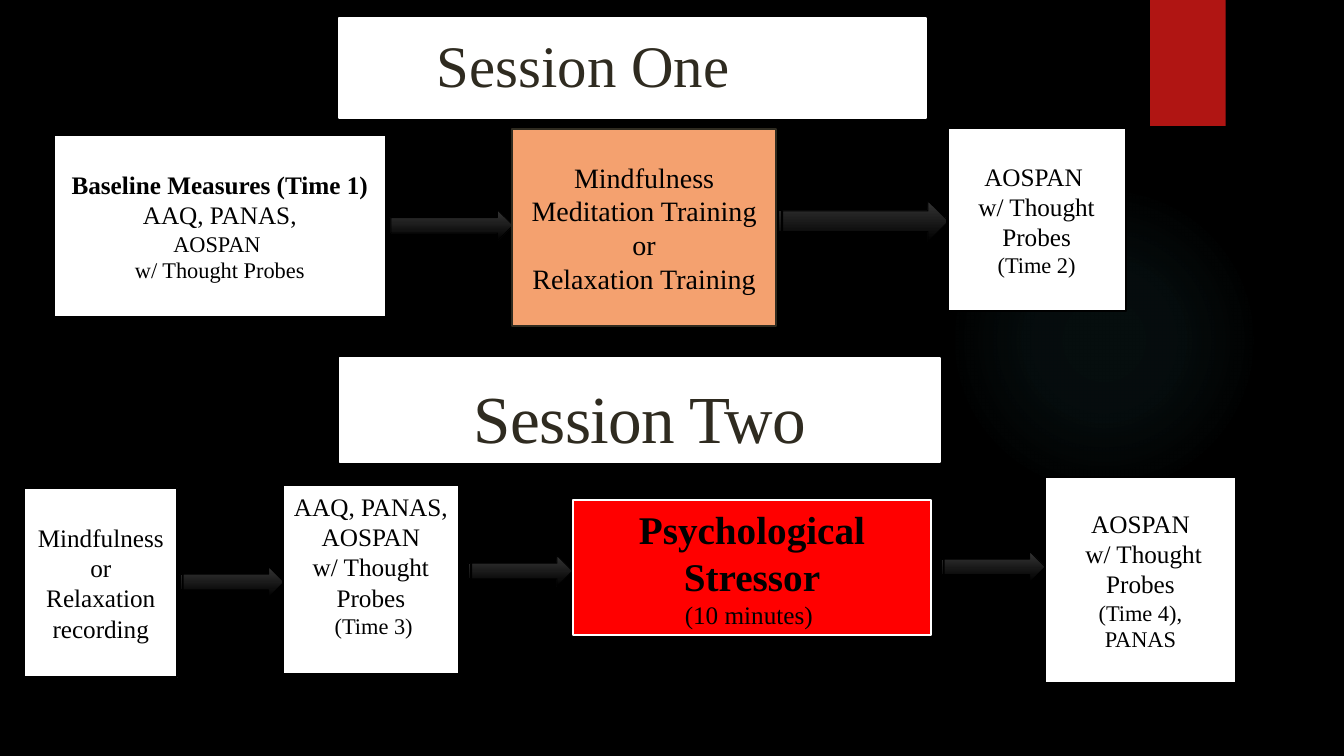
"""Build the two-session study procedure slide."""
import pptx
import pptx.util
import pptx.dml.color
import pptx.enum.shapes
import pptx.enum.text
import pptx.oxml
import pptx.oxml.ns
from dataclasses import dataclass

Pt = pptx.util.Pt
SHAPE = pptx.enum.shapes.MSO_SHAPE
ALIGN = pptx.enum.text.PP_ALIGN
ANCHOR = pptx.enum.text.MSO_ANCHOR


@dataclass
class Theme:
    """Colours, font and type sizes."""
    font: str = "Times New Roman"
    black: str = "000000"
    white: str = "FFFFFF"
    ink: str = "2F2B20"
    orange: str = "F4A16F"
    red: str = "FF0000"
    ribbon: str = "B01513"
    glow: str = "50B9C1"
    arrow: str = "353535"
    title: int = 42
    heading: int = 48
    stressor: int = 28
    training: int = 20
    body: int = 18
    small: int = 16


T = Theme()
TITLE = ("Session One", (241.9, 13, 419.8, 71.3))
HEADING = ("Session Two", (242.6, 255.6, 429.1, 74.2))
RIBBON = (821.5, 0, 54, 90)
GLOW = (677.5, 131.8, 221.8, 221.8)
GLOW_STOPS = ((0, 7), (36, 6), (69, 0))
ARROWS = [
    (275.8, 149.8, 90.7, 22.3),
    (554.4, 143.3, 123.1, 29.5),
    (127.4, 404.6, 75.6, 22.3),
    (333.4, 396.7, 75.6, 22.3),
    (671, 393.8, 75.6, 22.3),
]
BOXES = [
    dict(at=(38.2, 96.5, 237.6, 130.3), lines=[
        ("Baseline Measures (Time 1)", T.body, True), ("AAQ, PANAS,", T.body),
        ("AOSPAN ", T.small), ("w/ Thought Probes", T.small)]),
    dict(at=(676.8, 91.4, 127.4, 131), lines=[
        ("AOSPAN ", T.body), ("w/ Thought Probes", T.body), ("(Time 2)", T.small)]),
    dict(at=(365.8, 92.2, 188.6, 140.4), fill=T.orange, line=T.ink, lines=[
        ("Mindfulness Meditation Training or", T.training),
        ("Relaxation Training", T.training)]),
    dict(at=(17.3, 348.5, 109.4, 135.4), lines=[
        ("Mindfulness or Relaxation recording", T.body)]),
    dict(at=(202.3, 346.3, 125.3, 135.4), bottom=24.3, lines=[
        ("AAQ, PANAS,", T.body), ("AOSPAN", T.body),
        ("w/ Thought Probes", T.body), (" (Time 3)", T.small)]),
    dict(at=(409, 357.1, 256.3, 96.5), fill=T.red, line=T.white, shadow=(43, 4, 3, 45), lines=[
        ("Psychological Stressor", T.stressor, True), ("(10 minutes) ", T.body)]),
    dict(at=(746.6, 340.6, 136.1, 147.6), lines=[
        ("AOSPAN", T.body), (" w/ Thought Probes", T.body),
        ("(Time 4),", T.small), ("PANAS", T.small)]),
]


def rgb(color):
    """Return a colour object for a hex string."""
    return pptx.dml.color.RGBColor.from_string(color)


def write(p, text, size, bold=False, color=T.black, align=ALIGN.CENTER, spacing=None):
    """Put formatted text into a paragraph."""
    p.alignment = align
    p.line_spacing = spacing
    r = p.add_run()
    r.text = text
    r.font.name, r.font.size, r.font.bold = T.font, Pt(size), bold
    r.font.color.rgb = rgb(color)
    return r


def paint(sp, fill, line=None, width=1.5):
    """Set solid fill and outline."""
    sp.fill.solid()
    sp.fill.fore_color.rgb = rgb(fill)
    outline(sp, line, width)


def outline(sp, line, width):
    """Set an outline, or none."""
    if line:
        sp.line.color.rgb = rgb(line)
        sp.line.width = Pt(width)
    else:
        sp.line.fill.background()


def add_shape(s, kind, at):
    """Add a preset shape without the theme shadow."""
    sp = s.shapes.add_shape(kind, *map(Pt, at))
    sp.shadow.inherit = False
    return sp


def add_shadow(sp, alpha=45, blur=3, dist=2, angle=90):
    """Give a shape an outer shadow."""
    effects = sp.element.spPr.find(pptx.oxml.ns.qn("a:effectLst"))
    effects.append(pptx.oxml.parse_xml(
        f'<a:outerShdw {pptx.oxml.ns.nsdecls("a")} blurRad="{Pt(blur)}" dist="{Pt(dist)}" '
        f'dir="{angle * 60000}" rotWithShape="0"><a:srgbClr val="{T.black}">'
        f'<a:alpha val="{alpha * 1000}"/></a:srgbClr></a:outerShdw>'))


def add_glow(s):
    """Add the faint round glow."""
    sp = add_shape(s, SHAPE.OVAL, GLOW)
    outline(sp, None, 0)
    stops = "".join(
        f'<a:gs pos="{pos * 1000}"><a:srgbClr val="{T.glow}">'
        f'<a:alpha val="{alpha * 1000}"/></a:srgbClr></a:gs>' for pos, alpha in GLOW_STOPS)
    geometry = sp.element.spPr.find(pptx.oxml.ns.qn("a:prstGeom"))
    geometry.addnext(pptx.oxml.parse_xml(
        f'<a:gradFill {pptx.oxml.ns.nsdecls("a")}><a:gsLst>{stops}</a:gsLst><a:path path="circle">'
        '<a:fillToRect l="50000" t="50000" r="50000" b="50000"/></a:path></a:gradFill>'))


def add_arrow(s, at):
    """Add a striped arrow with a dark gradient."""
    sp = add_shape(s, SHAPE.STRIPED_RIGHT_ARROW, at)
    sp.fill.gradient()
    sp.fill.gradient_angle = 270
    for stop, pos, color in zip(sp.fill.gradient_stops, (0, 1), (T.arrow, T.black)):
        stop.position = pos
        stop.color.rgb = rgb(color)
    outline(sp, T.black, 0.75)
    add_shadow(sp)


def add_box(s, at, lines, fill=T.white, line=T.black, shadow=None, bottom=3.6):
    """Add a procedure box with centred lines."""
    sp = add_shape(s, SHAPE.RECTANGLE, at)
    paint(sp, fill, line)
    if shadow:
        add_shadow(sp, *shadow)
    tf = sp.text_frame
    tf.word_wrap, tf.vertical_anchor, tf.margin_bottom = True, ANCHOR.MIDDLE, Pt(bottom)
    for i, item in enumerate(lines):
        write(tf.add_paragraph() if i else tf.paragraphs[0], *item)


def add_title(s):
    """Fill the title placeholder."""
    text, at = TITLE
    sp = s.shapes.title
    sp.left, sp.top, sp.width, sp.height = map(Pt, at)
    paint(sp, T.white, T.white)
    tf = sp.text_frame
    tf.auto_size, tf.vertical_anchor = pptx.enum.text.MSO_AUTO_SIZE.NONE, ANCHOR.MIDDLE
    tf.margin_left = Pt(70.2)
    write(tf.paragraphs[0], text, T.title, color=T.ink, align=ALIGN.LEFT, spacing=0.9)


def add_heading(s):
    """Add the second session heading."""
    text, at = HEADING
    sp = add_shape(s, SHAPE.RECTANGLE, at)
    paint(sp, T.white, T.white, 1.25)
    tf = sp.text_frame
    tf.word_wrap, tf.vertical_anchor = True, ANCHOR.BOTTOM
    r = write(tf.paragraphs[0], text, T.heading, color=T.ink, spacing=0.85)
    r.font._element.set("spc", "-50")


def main():
    """Build and save the slide."""
    prs = pptx.Presentation()
    prs.slide_width, prs.slide_height = Pt(960), Pt(540)
    s = prs.slides.add_slide(prs.slide_layouts[5])
    s.background.fill.solid()
    s.background.fill.fore_color.rgb = rgb(T.black)
    add_glow(s)
    ribbon = add_shape(s, SHAPE.RECTANGLE, RIBBON)
    paint(ribbon, T.ribbon)
    add_shadow(ribbon)
    add_title(s)
    add_heading(s)
    for at in ARROWS:
        add_arrow(s, at)
    for box in BOXES:
        add_box(s, **box)
    prs.save("out.pptx")


if __name__ == "__main__":
    main()
